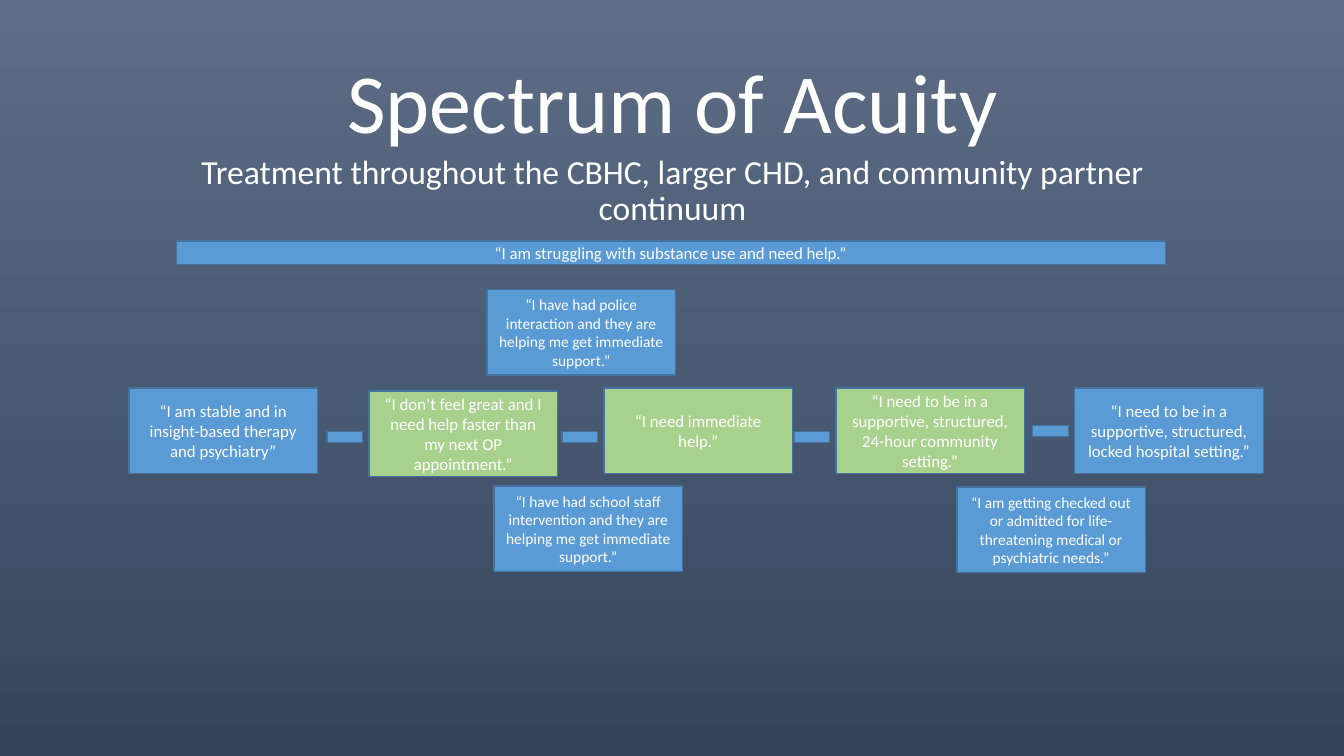
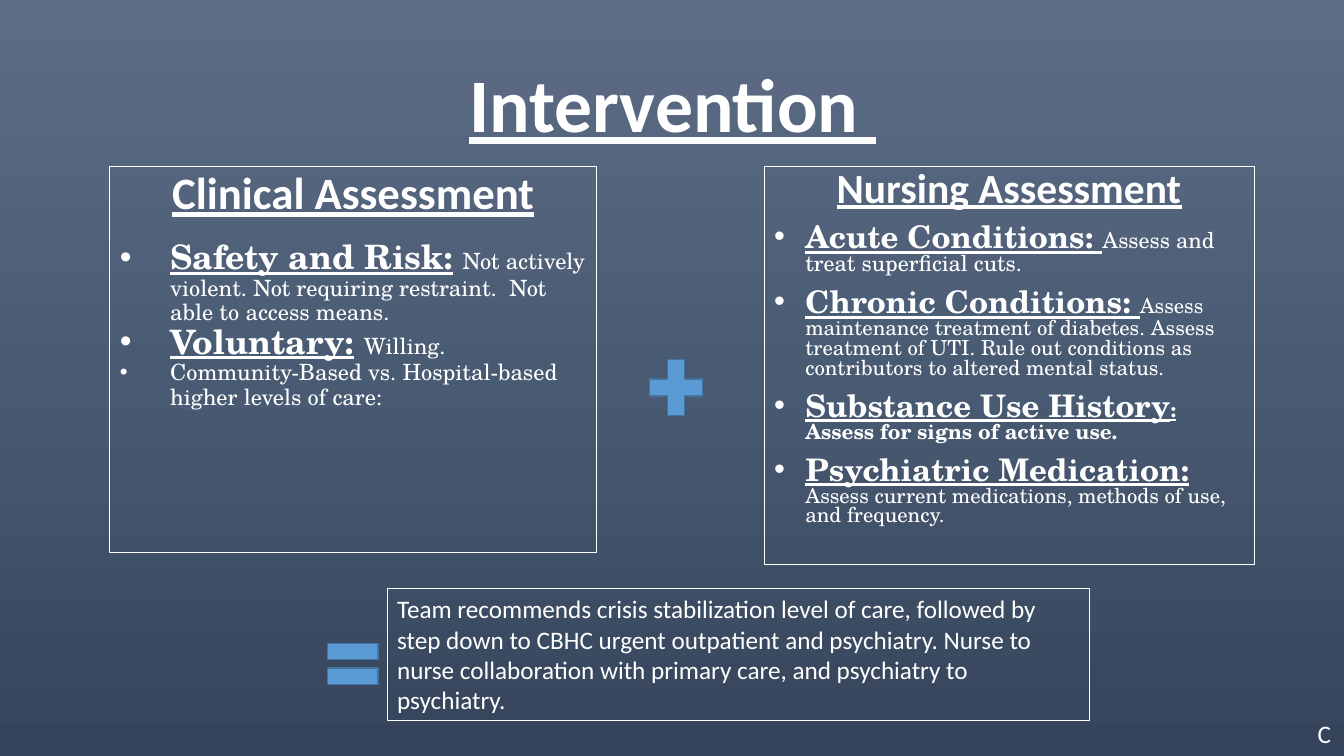
from lxml import etree
from pptx import Presentation
from pptx.dml.color import RGBColor
from pptx.enum.shapes import MSO_SHAPE
from pptx.enum.text import MSO_ANCHOR, PP_ALIGN
from pptx.oxml.ns import qn
from pptx.util import Inches, Pt

CENTER, LEFT = PP_ALIGN.CENTER, PP_ALIGN.LEFT
TOP, MIDDLE, BOTTOM = MSO_ANCHOR.TOP, MSO_ANCHOR.MIDDLE, MSO_ANCHOR.BOTTOM
RECTANGLE, PROCESS = MSO_SHAPE.RECTANGLE, MSO_SHAPE.FLOWCHART_PROCESS
MINUS, PLUS, EQUAL = MSO_SHAPE.MATH_MINUS, MSO_SHAPE.MATH_PLUS, MSO_SHAPE.MATH_EQUAL

# Shared look
WHITE, BLUE, GREEN, EDGE = "FFFFFF", "5B9BD5", "A9D18E", "43739E"
BACKGROUND_STOPS = [(0, "5E6D85"), (50, "495A73"), (100, "35445A")]
SANS, SERIF = "Calibri", "TeX Gyre Schola"
BOX_WIDTH, BOX_HEIGHT = 1.87, 0.85
DASH_WIDTH, DASH_HEIGHT = 0.48, 0.45

# Acuity steps: left, top, fill, top of the dash before the box, text
STEPS = [
    (1.28, 3.85, BLUE, None, "“I am stable and in insight-based therapy and psychiatry”"),
    (3.66, 3.88, GREEN, 4.11,
     "“I don’t feel great and I need help faster than my next OP appointment.”"),
    (5.99, 3.85, GREEN, 4.11, "“I need immediate help.”"),
    (8.29, 3.85, GREEN, 4.11,
     "“I need to be in a supportive, structured, 24-hour community setting.”"),
    (10.66, 3.85, BLUE, 4.05,
     "“I need to be in a supportive, structured, locked hospital setting.”"),
]

# Side paths into care: left, top, text
SIDE_PATHS = [
    (4.83, 2.87,
     "“I have had police interaction and they are helping me get immediate support.”"),
    (4.9, 4.82,
     "“I have had school staff intervention and they are helping me get immediate support.”"),
    (9.49, 4.83,
     "“I am getting checked out or admitted for life-threatening medical or psychiatric needs.”"),
]

# Assessment bullets: runs of text, size, bold, underline
CLINICAL = [
    [("Safety and Risk:", 24, True, True), (" ", 24, True, False),
     ("Not actively violent. Not requiring restraint.  Not able to access means.",
      16, False, False)],
    [("Voluntary:", 24, True, True), (" ", 24, True, False), ("Willing.", 16, False, False)],
    [("Community-Based vs. Hospital-based higher levels of care:", 16, False, False)],
]
NURSING = [
    [("Acute Conditions: ", 22.2, True, True),
     ("Assess and treat superficial cuts.", 15.7, False, False)],
    [("Chronic Conditions: ", 22.2, True, True),
     ("Assess maintenance treatment of diabetes. Assess treatment of UTI. "
      "Rule out conditions as contributors to altered mental status.", 14.8, False, False)],
    [("Substance Use History", 22.2, True, True), (":", 14.8, True, True),
     (" Assess for signs of active use.", 14.8, True, False)],
    [("Psychiatric Medication: ", 22.2, True, True),
     ("Assess current medications, methods of use, and frequency.", 14.8, False, False)],
]


def color(value):
    return RGBColor.from_string(value)


def set_background(target):
    fill = target.background.fill
    fill.gradient()
    fill.gradient_angle = 270
    stops = next(target.element.iter(qn("a:gsLst")))
    for stop in list(stops):
        stops.remove(stop)
    for percent, value in BACKGROUND_STOPS:
        stop = etree.SubElement(stops, qn("a:gs"), pos=str(percent * 1000))
        etree.SubElement(stop, qn("a:srgbClr"), val=value)


def format_run(run, size, font=SANS, bold=False, underline=False):
    run.font.name = font
    run.font.size = Pt(size)
    run.font.bold = bold
    run.font.underline = underline
    run.font.color.rgb = color(WHITE)


def write(shape, text, size, align=CENTER, anchor=MIDDLE, spacing=1.0, wrap=True, strong=False):
    frame = shape.text_frame
    frame.text = text
    frame.word_wrap = wrap
    frame.vertical_anchor = anchor
    paragraph = frame.paragraphs[0]
    paragraph.alignment = align
    paragraph.line_spacing = spacing
    format_run(paragraph.runs[0], size, bold=strong, underline=strong)


def add_text(slide, box, text, size, **style):
    write(slide.shapes.add_textbox(*map(Inches, box)), text, size, **style)


def add_block(slide, kind, box, fill=BLUE):
    """A filled shape with the shared edge."""
    shape = slide.shapes.add_shape(kind, *map(Inches, box))
    shape.shadow.inherit = False
    shape.fill.solid()
    shape.fill.fore_color.rgb = color(fill)
    shape.line.color.rgb = color(EDGE)
    shape.line.width = Pt(1)
    return shape


def add_frame(slide, box):
    """An unfilled rectangle with a thin white outline."""
    shape = slide.shapes.add_shape(RECTANGLE, *map(Inches, box))
    shape.shadow.inherit = False
    shape.fill.background()
    shape.line.color.rgb = color(WHITE)
    shape.line.width = Pt(0.75)
    return shape


def add_bullet(frame, runs, indent, spacing, space_before):
    paragraph = frame.add_paragraph()
    properties = paragraph._p.get_or_add_pPr()
    properties.set("marL", str(Inches(indent)))
    properties.set("indent", str(-Inches(indent)))
    etree.SubElement(properties, qn("a:buFont"), typeface="Arial")
    etree.SubElement(properties, qn("a:buChar"), char="•")
    paragraph.alignment = LEFT
    paragraph.line_spacing = spacing
    paragraph.space_before = Pt(space_before)
    for text, size, bold, underline in runs:
        run = paragraph.add_run()
        run.text = text
        format_run(run, size, SERIF, bold, underline)


def add_assessment(slide, box, heading, size, bullets, indent, spacing, gap, heading_gap):
    shape = add_frame(slide, box)
    write(shape, heading, size, anchor=TOP, spacing=spacing, strong=True)
    for index, runs in enumerate(bullets):
        add_bullet(shape.text_frame, runs, indent, spacing, gap if index else heading_gap)


def build_spectrum(slide):
    # Title and subtitle
    add_text(slide, (1.67, 0.46, 10, 1.09), "Spectrum of Acuity", 60,
             anchor=BOTTOM, spacing=0.9)
    add_text(slide, (1.67, 1.49, 10, 1.81),
             "Treatment throughout the CBHC, larger CHD, and community partner continuum",
             24, anchor=TOP, spacing=0.9)

    # Steps joined by dashes
    for left, top, fill, dash_top, text in STEPS:
        write(add_block(slide, PROCESS, (left, top, BOX_WIDTH, BOX_HEIGHT), fill), text, 12)
        if dash_top:
            add_block(slide, MINUS, (left - DASH_WIDTH, dash_top, DASH_WIDTH, DASH_HEIGHT))

    # Side paths
    for left, top, text in SIDE_PATHS:
        write(add_block(slide, PROCESS, (left, top, BOX_WIDTH, BOX_HEIGHT)), text, 11)

    # Bar across the whole spectrum
    bar = add_block(slide, MINUS, (-0.02, 2.01, 13.35, 1))
    write(bar, "“I am struggling with substance use and need help.”", 12)


def build_intervention(slide):
    # Title
    add_text(slide, (1.67, 0.72, 10, 0.81), "Intervention ", 54,
             anchor=BOTTOM, spacing=0.9, strong=True)

    # Assessments
    add_assessment(slide, (7.58, 1.65, 4.86, 3.95), "Nursing Assessment", 29.6, NURSING,
                   indent=0.31, spacing=0.8, gap=10, heading_gap=10)
    add_assessment(slide, (1.09, 1.65, 4.83, 3.83), "Clinical Assessment", 32, CLINICAL,
                   indent=0.5, spacing=0.9, gap=0, heading_gap=15)

    # Signs and recommendation
    add_block(slide, PLUS, (6.35, 3.47, 0.71, 0.75))
    add_block(slide, EQUAL, (3.16, 6.24, 0.68, 0.69))
    write(add_frame(slide, (3.84, 5.84, 6.97, 1.31)),
          "Team recommends crisis stabilization level of care, followed by step down to CBHC "
          "urgent outpatient and psychiatry. Nurse to nurse collaboration with primary care, "
          "and psychiatry to psychiatry.", 18, align=LEFT, anchor=TOP)

    # Corner letter
    add_text(slide, (12.97, 7.08, 0.33, 0.4), "C", 18, align=LEFT, anchor=TOP, wrap=False)


def main():
    presentation = Presentation()
    presentation.slide_width = Inches(13.33)
    presentation.slide_height = Inches(7.5)
    set_background(presentation.slide_master)
    blank = presentation.slide_layouts[6]
    for build in (build_spectrum, build_intervention):
        build(presentation.slides.add_slide(blank))
    presentation.save("out.pptx")


if __name__ == "__main__":
    main()
